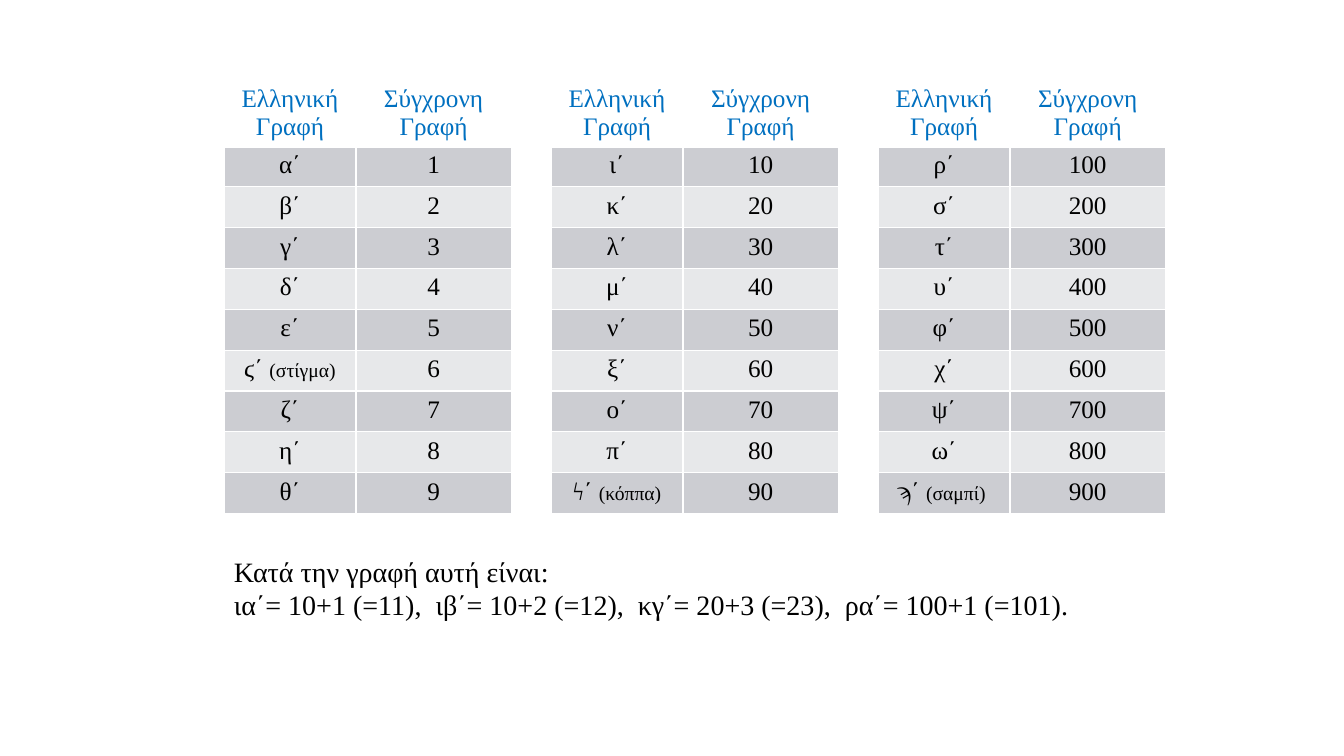
from dataclasses import dataclass

from lxml.etree import SubElement
from pptx import Presentation
from pptx.dml.color import RGBColor
from pptx.enum.text import MSO_AUTO_SIZE, PP_ALIGN
from pptx.oxml.ns import qn
from pptx.util import Pt


@dataclass(frozen=True)
class Theme:
    font: str = "Times New Roman"
    header: str = "0070C0"
    text: str = "000000"
    border: str = "FFFFFF"
    bands: tuple = ("CCCDD2", "E7E8EA")
    cell_size: int = 18
    name_size: int = 14
    note_size: int = 20


THEME = Theme()
HEADERS = ("Ελληνική Γραφή", "Σύγχρονη Γραφή")
NUMERALS = ("αβγδεϛζηθ", "ικλμνξοπϟ", "ρστυφχψωϡ")
LETTER_NAMES = {"ϛ": "(στίγμα)", "ϟ": "(κόππα)", "ϡ": "(σαμπί) "}
NOTES = (
    "Κατά την γραφή αυτή είναι:",
    "ια΄= 10+1 (=11),  ιβ΄= 10+2 (=12),  κγ΄= 20+3 (=23),  ρα΄= 100+1 (=101).",
)
LEFT, TOP, STEP = 160, 57, 233.6
COLUMNS = (94.3, 110.9)
ROW_HEIGHT, TABLE_HEIGHT = 29.2, 313


def add_run(p, text, size, color=THEME.text):
    r = p.add_run()
    r.text = text
    r.font.name = THEME.font
    r.font.size = Pt(size)
    r.font.color.rgb = RGBColor.from_string(color)


def add_borders(cell, bottom):
    tcPr = cell._tc.get_or_add_tcPr()
    for side, width in (("L", 1), ("R", 1), ("T", 1), ("B", bottom)):
        ln = SubElement(tcPr, qn(f"a:ln{side}"), w=str(Pt(width)))
        fill = SubElement(ln, qn("a:solidFill"))
        SubElement(fill, qn("a:srgbClr"), val=THEME.border)


def fill_cell(cell, runs, color=THEME.text, band=None):
    add_borders(cell, 1 if band else 3)
    if band:
        cell.fill.solid()
        cell.fill.fore_color.rgb = RGBColor.from_string(band)
    else:
        cell.fill.background()
    p = cell.text_frame.paragraphs[0]
    p.alignment = PP_ALIGN.CENTER
    for text, size in runs:
        add_run(p, text, size, color)


def letter_runs(letter):
    name = LETTER_NAMES.get(letter)
    if name:
        return [(f"{letter}΄ ", THEME.cell_size), (name, THEME.name_size)]
    return [(f"{letter}΄", THEME.cell_size)]


def add_numeral_table(s, left, letters, unit):
    frame = s.shapes.add_table(len(letters) + 1, len(COLUMNS), Pt(left), Pt(TOP),
                               Pt(sum(COLUMNS)), Pt(TABLE_HEIGHT))
    table = frame.table
    table.first_row = False
    table.horz_banding = False
    for column, width in zip(table.columns, COLUMNS):
        column.width = Pt(width)
    for row in table.rows:
        row.height = Pt(ROW_HEIGHT)
    frame.height = Pt(TABLE_HEIGHT)
    for col, header in enumerate(HEADERS):
        fill_cell(table.cell(0, col), [(header, THEME.cell_size)], THEME.header)
    for i, letter in enumerate(letters, 1):
        band = THEME.bands[(i - 1) % 2]
        fill_cell(table.cell(i, 0), letter_runs(letter), band=band)
        fill_cell(table.cell(i, 1), [(str(i * unit), THEME.cell_size)], band=band)


def add_notes_box(s, left, top, width, height):
    tf = s.shapes.add_textbox(Pt(left), Pt(top), Pt(width), Pt(height)).text_frame
    tf.word_wrap = True
    tf.auto_size = MSO_AUTO_SIZE.SHAPE_TO_FIT_TEXT
    for i, line in enumerate(NOTES):
        p = tf.add_paragraph() if i else tf.paragraphs[0]
        add_run(p, line, THEME.note_size)


def main():
    prs = Presentation()
    prs.slide_width, prs.slide_height = Pt(960), Pt(540)
    s = prs.slides.add_slide(prs.slide_layouts[6])
    for i, letters in enumerate(NUMERALS):
        add_numeral_table(s, LEFT + i * STEP, letters, 10 ** i)
    add_notes_box(s, LEFT, 392.4, 672.5, 55.4)
    prs.save("out.pptx")


if __name__ == "__main__":
    main()
